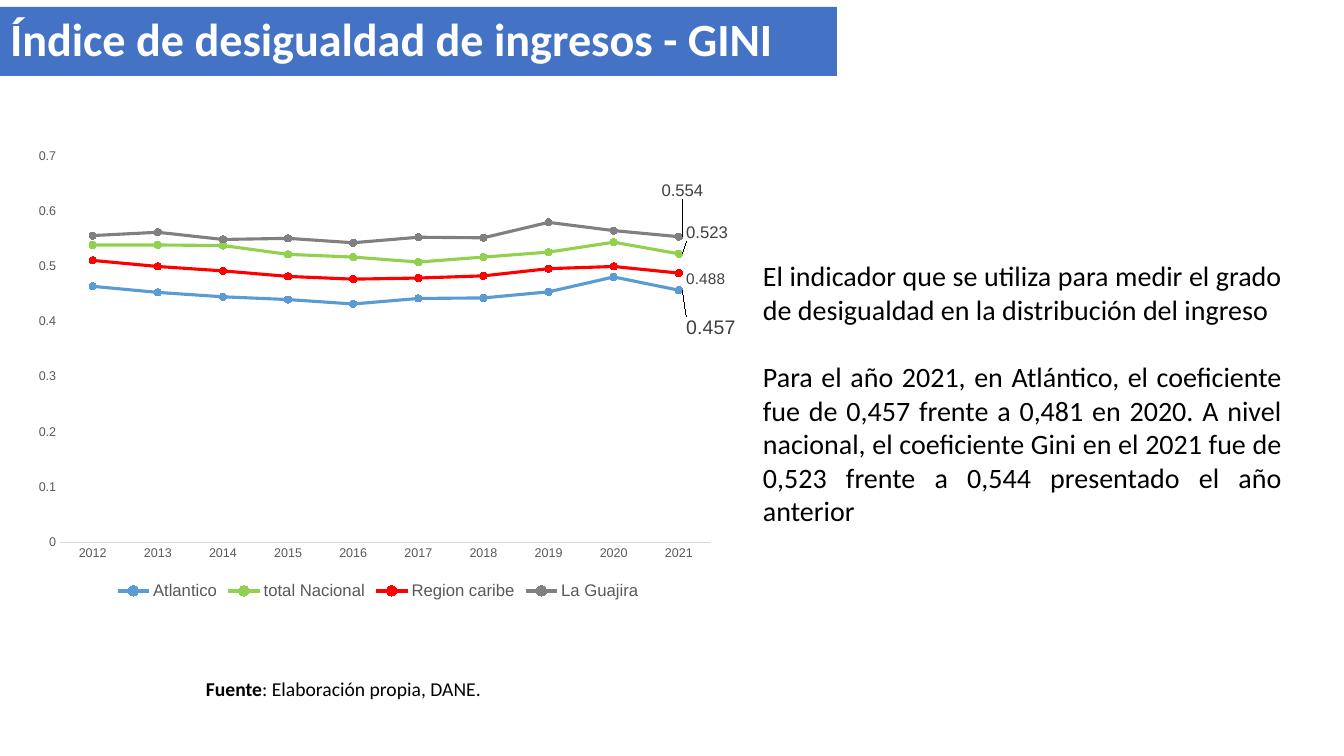
from lxml import etree
from pptx import Presentation
from pptx.chart.data import CategoryChartData
from pptx.dml.color import RGBColor
from pptx.enum.chart import XL_CHART_TYPE as CT, XL_LABEL_POSITION as LP
from pptx.enum.chart import XL_LEGEND_POSITION as LEG, XL_MARKER_STYLE as MS, XL_TICK_MARK as TM
from pptx.enum.shapes import MSO_SHAPE
from pptx.enum.text import MSO_ANCHOR as ANC, MSO_AUTO_SIZE as AUTO, PP_ALIGN as AL
from pptx.oxml import parse_xml
from pptx.oxml.ns import nsdecls, qn
from pptx.util import Emu, Pt

SCALE = 9144000 / 1008
GREY = "595959"
YEARS = [str(year) for year in range(2012, 2022)]
SERIES = [
    ("Atlantico", "5B9BD5", 14, (0, 0.08),
     [0.464, 0.453, 0.445, 0.44, 0.432, 0.442, 0.443, 0.454, 0.481, 0.457]),
    ("total Nacional", "92D050", 12, (0, -0.045),
     [0.539, 0.539, 0.538, 0.522, 0.517, 0.508, 0.517, 0.526, 0.544, 0.523]),
    ("Region caribe", "FF0000", 11, (0, 0.012),
     [0.511, 0.5, 0.492, 0.482, 0.477, 0.479, 0.483, 0.496, 0.5, 0.488]),
    ("La Guajira", "808080", 12, (-0.035, -0.1),
     [0.556, 0.562, 0.549, 0.551, 0.543, 0.553, 0.552, 0.58, 0.565, 0.554]),
]
PLOT_AREA = {"layoutTarget": "inner", "xMode": "edge", "yMode": "edge",
             "x": 0.051, "y": 0.035, "w": 0.92, "h": 0.832}
LEADER_LINES = (
    f'<c:extLst {nsdecls("c")}><c:ext uri="{{CE6537A1-D6FC-4f65-9D91-7224C49458BB}}" '
    'xmlns:c15="http://schemas.microsoft.com/office/drawing/2012/chart">'
    '<c15:showLeaderLines val="1"/></c:ext></c:extLst>')


def px(*lengths):
    """Turn pixel lengths into EMU."""
    return [Emu(round(n * SCALE)) for n in lengths]


def rgb(color):
    """Give the colour of a hex string."""
    return RGBColor.from_string(color)


def set_attrs(obj, **values):
    """Set attributes from format values."""
    for name, value in values.items():
        setattr(obj, name, value)


def set_font(font, size, color="000000", name="Calibri", bold=False):
    """Format a font."""
    set_attrs(font, size=Pt(size), name=name, bold=bold)
    font.color.rgb = rgb(color)


def set_fill(sp, color):
    """Give a shape a plain fill without line or shadow."""
    sp.fill.solid()
    sp.fill.fore_color.rgb = rgb(color)
    sp.line.fill.background()


def set_frame(tf, anchor, inset):
    """Format a text frame with a vertical inset in pixels."""
    side, edge = px(10, inset)
    set_attrs(tf, word_wrap=True, auto_size=AUTO.NONE, vertical_anchor=anchor,
              margin_left=side, margin_right=side, margin_top=edge, margin_bottom=edge)


def add_runs(p, runs, size, align, color="000000"):
    """Fill a paragraph with (text, bold) runs."""
    p.alignment = align
    for text, bold in runs:
        r = p.add_run()
        r.text = text
        set_font(r.font, size, color, bold=bold)


def set_layout(parent, index, values):
    """Insert a manual layout into a chart part."""
    for old in parent.findall(qn("c:layout")):
        parent.remove(old)
    layout = etree.Element(qn("c:layout"))
    manual = etree.SubElement(layout, qn("c:manualLayout"))
    for name, value in values.items():
        etree.SubElement(manual, qn(f"c:{name}")).set("val", str(value))
    parent.insert(index, layout)


def add_title(s, text):
    """Fill the title band."""
    sp = s.shapes.title
    left, top, width, height = px(0, 7, 837, 69)
    set_attrs(sp, left=left, top=top, width=width, height=height)
    set_fill(sp, "4472C4")
    set_frame(sp.text_frame, ANC.MIDDLE, 5)
    p = sp.text_frame.paragraphs[0]
    p.line_spacing = 0.9
    add_runs(p, [(text, True)], 33, AL.LEFT, "FFFFFF")


def add_comment_box(s, texts):
    """Add the justified explanation."""
    sp = s.shapes.add_shape(MSO_SHAPE.RECTANGLE, *px(753, 230, 539, 326))
    sp.shadow.inherit = False
    set_fill(sp, "FFFFFF")
    tf = sp.text_frame
    set_frame(tf, ANC.MIDDLE, 10)
    for i, text in enumerate(texts):
        p = tf.add_paragraph() if i else tf.paragraphs[0]
        if i:
            p.space_before = Pt(24)
        add_runs(p, [(text, False)], 20, AL.JUSTIFY)


def add_source_note(s, runs):
    """Add the centred source line."""
    tf = s.shapes.add_textbox(*px(119, 667, 449, 44)).text_frame
    set_frame(tf, ANC.TOP, 10)
    add_runs(tf.paragraphs[0], runs, 14, AL.CENTER)


def style_series(ser, color, size, offset):
    """Format one line and label its last point."""
    ser.smooth = False
    ser.format.line.width = Pt(2.25)
    ser.format.line.color.rgb = rgb(color)
    set_attrs(ser.marker, style=MS.CIRCLE, size=5)
    for part in (ser.marker.format.fill, ser.marker.format.line.fill):
        part.solid()
        part.fore_color.rgb = rgb(color)
    labels = ser.data_labels
    labels.show_value = False
    label = ser.points[len(YEARS) - 1].data_label
    set_font(label.font, size, "404040", "Arial")
    label.position = LP.RIGHT
    dlbls = ser._element.find(qn("c:dLbls"))
    set_layout(dlbls.find(qn("c:dLbl")), 1, dict(zip("xy", offset)))
    dlbls.append(parse_xml(LEADER_LINES))


def add_gini_chart(s):
    """Add the line chart of Gini values."""
    data = CategoryChartData()
    data.categories = YEARS
    for name, *_, values in SERIES:
        data.add_series(name, values)
    chart = s.shapes.add_chart(CT.LINE_MARKERS, *px(24, 140, 712, 464), data).chart
    set_attrs(chart, has_title=False, has_legend=True)
    set_font(chart.font, 10, name="Arial")
    set_attrs(chart.legend, position=LEG.BOTTOM, include_in_layout=False)
    set_font(chart.legend.font, 12, GREY, "Arial")
    for axis in (chart.category_axis, chart.value_axis):
        set_attrs(axis, major_tick_mark=TM.NONE, minor_tick_mark=TM.NONE,
                  has_major_gridlines=False)
        set_font(axis.tick_labels.font, 9, GREY, "Arial")
    set_attrs(chart.value_axis, minimum_scale=0, maximum_scale=0.7, major_unit=0.1)
    chart.value_axis.format.line.fill.background()
    chart.category_axis.format.line.width = Pt(0.75)
    chart.category_axis.format.line.color.rgb = rgb("D9D9D9")
    plot = chart.plots[0]
    plot.vary_by_categories = False
    for ser, (_, color, size, offset, _) in zip(plot.series, SERIES):
        style_series(ser, color, size, offset)
    set_layout(chart._chartSpace.chart.plotArea, 0, PLOT_AREA)


def main():
    """Build and save the slide."""
    prs = Presentation()
    prs.slide_width, prs.slide_height = px(1344, 756)
    s = prs.slides.add_slide(prs.slide_layouts[5])
    add_title(s, "Índice de desigualdad de ingresos - GINI")
    add_comment_box(s, [
        "El indicador que se utiliza para medir el grado de desigualdad en la "
        "distribución del ingreso",
        "Para el año 2021, en Atlántico, el coeficiente fue de 0,457 frente a 0,481 "
        "en 2020. A nivel nacional, el coeficiente Gini en el 2021 fue de 0,523 "
        "frente a 0,544 presentado el año anterior"])
    add_gini_chart(s)
    add_source_note(s, [("Fuente", True), (": Elaboración propia, DANE.", False)])
    prs.save("out.pptx")


if __name__ == "__main__":
    main()
